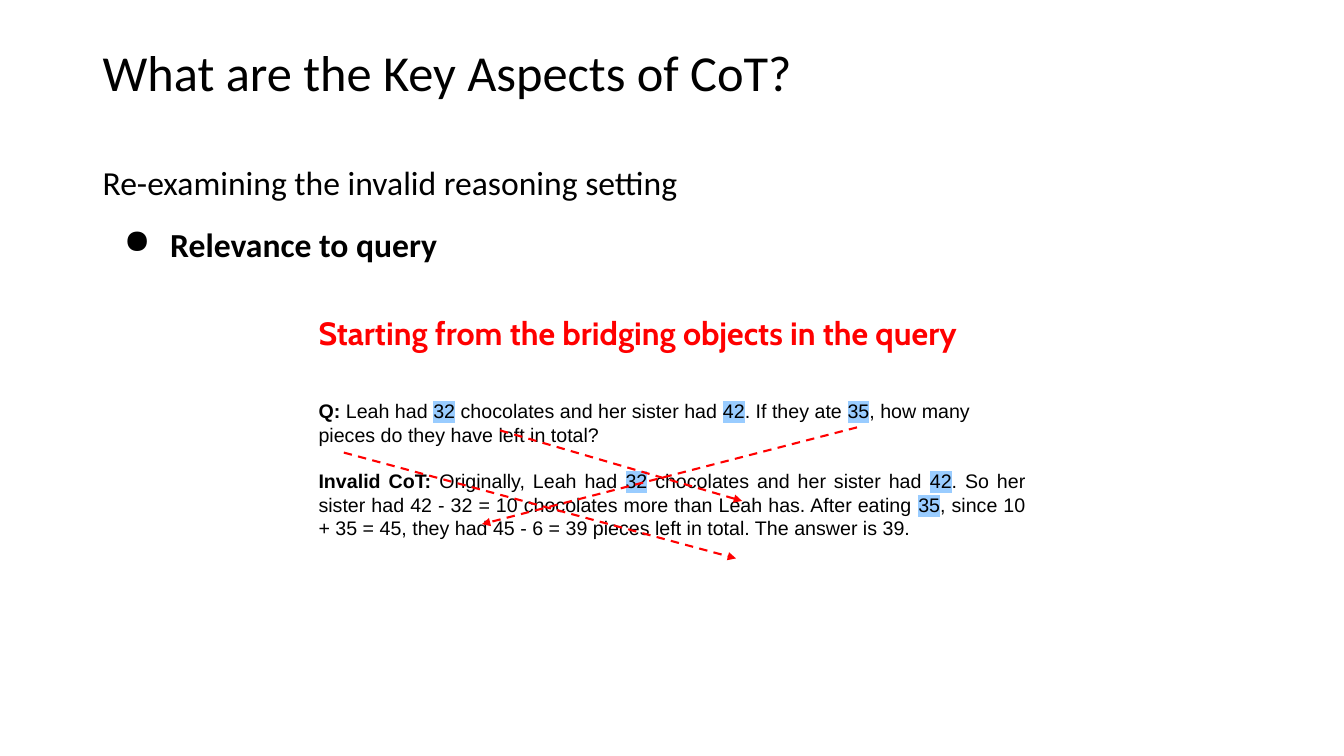
from lxml import etree
from pptx import Presentation
from pptx import util as u
from pptx.dml.color import RGBColor
from pptx.enum import dml, shapes, text
from pptx.oxml import ns

BLACK = RGBColor(0, 0, 0)
RED = RGBColor(255, 0, 0)
BLUE = RGBColor(0x99, 0xCC, 0xFF)


def add_xml(parent, tag, **attrs):
    return etree.SubElement(parent, ns.qn(tag), attrs)


def add_box(slide, box, side=0.1, top=0.05):
    frame = slide.shapes.add_textbox(*map(u.Inches, box)).text_frame
    frame.word_wrap = True
    frame.margin_left = frame.margin_right = u.Inches(side)
    frame.margin_top = frame.margin_bottom = u.Inches(top)
    return frame


def style(para, face, size, color=BLACK, bold=False):
    font = para.font
    font.name, font.size, font.bold = face, u.Pt(size), bold
    font.color.rgb = color


def add_title(slide, box):
    frame = add_box(slide, box)
    frame.vertical_anchor = text.MSO_ANCHOR.MIDDLE
    para = frame.paragraphs[0]
    para.text = "What are the Key Aspects of CoT?"
    para.line_spacing = 0.9
    style(para, "Calibri", 36)


def add_body(slide, box):
    frame = add_box(slide, box)
    lead = frame.paragraphs[0]
    lead.text = "Re-examining the invalid reasoning setting"
    point = frame.add_paragraph()
    point.text = "Relevance to query"
    point.space_before = u.Pt(10.7)

    # Bullet with hanging indent
    props = point._p.get_or_add_pPr()
    props.set("marL", str(u.Inches(0.67)))
    props.set("indent", str(u.Inches(-0.46)))
    add_xml(add_xml(props, "a:buClr"), "a:srgbClr", val=str(BLACK))
    add_xml(props, "a:buChar", char="●")

    for para in (lead, point):
        para.line_spacing = 1.15
        style(para, "Calibri", 24, bold=para is point)


def add_head(slide, box):
    para = add_box(slide, box, 0.13, 0.13).paragraphs[0]
    para.text = "Starting from the bridging objects in the query"
    style(para, "Cabin", 23, RED, True)


def fill_para(para, label, parts):
    """Bold label, then plain parts with every second one marked."""
    style(para, "Arial", 14)
    run = para.add_run()
    run.text, run.font.bold = label, True
    for i, part in enumerate(parts):
        run = para.add_run()
        run.text = part
        if i % 2:
            mark = add_xml(run._r.get_or_add_rPr(), "a:highlight")
            add_xml(mark, "a:srgbClr", val=str(BLUE))


def add_sample(slide, box):
    frame = add_box(slide, box, 0.13, 0.13)
    fill_para(frame.paragraphs[0], "Q: ", [
        "Leah had ", "32", " chocolates and her sister had ", "42",
        ". If they ate ", "35",
        ", how many pieces do they have left in total?"])
    chain = frame.add_paragraph()
    chain.alignment = text.PP_ALIGN.JUSTIFY
    chain.space_before = u.Pt(16.5)
    fill_para(chain, "Invalid CoT: ", [
        "Originally, Leah had ", "32", " chocolates and her sister had ", "42",
        ". So her sister had 42 - 32 = 10 chocolates more than Leah has. "
        "After eating ", "35",
        ", since 10 + 35 = 45, they had 45 - 6 = 39 pieces left in total. "
        "The answer is 39."])


def add_arrows(slide, left, top, ends):
    for x1, y1, x2, y2 in ends:
        link = slide.shapes.add_connector(
            shapes.MSO_CONNECTOR.STRAIGHT,
            u.Inches(left + x1), u.Inches(top + y1),
            u.Inches(left + x2), u.Inches(top + y2))
        link.line.color.rgb = RED
        link.line.width = u.Pt(1.5)
        link.line.dash_style = dml.MSO_LINE.DASH
        add_xml(link.line._get_or_add_ln(), "a:tailEnd", type="triangle")
        add_xml(link._element.spPr, "a:effectLst")


def main():
    deck = Presentation()
    deck.slide_width, deck.slide_height = u.Inches(13.33), u.Inches(7.5)
    slide = deck.slides.add_slide(deck.slide_layouts[6])

    # Title and bullet
    add_title(slide, (0.92, 0.02, 11.5, 1.45))
    add_body(slide, (0.92, 1.5, 11.5, 5.39))

    # Worked example with its heading
    left, top = 3.03, 3.83
    add_sample(slide, (left, top, 7.27, 1.68))
    add_head(slide, (left, top - 0.85, 7.59, 1.04))

    # Arrows from the query to the reasoning
    add_arrows(slide, left, top, [
        (1.93, 0.44, 4.33, 1.14),
        (5.47, 0.41, 1.75, 1.37),
        (0.38, 0.66, 4.27, 1.71)])
    deck.save("out.pptx")


if __name__ == "__main__":
    main()
